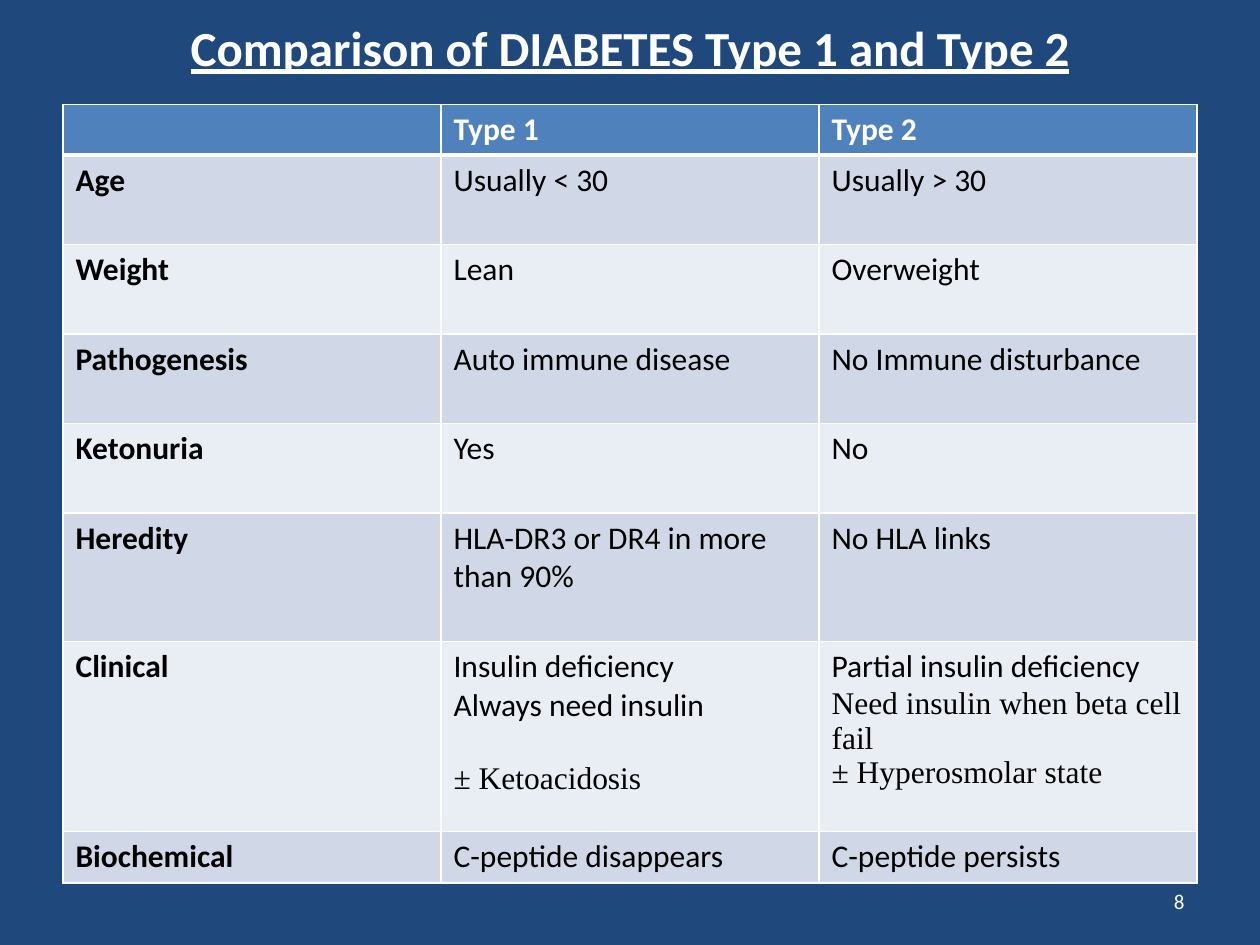
from lxml import etree
from pptx import Presentation
from pptx.dml.color import RGBColor
from pptx.enum.text import MSO_ANCHOR, PP_ALIGN
from pptx.oxml.ns import qn
from pptx.util import Inches, Pt

HEADING = "Comparison of DIABETES Type 1 and Type 2"
PAGE = "8"
COLUMNS = ["", "Type 1", "Type 2"]
SERIF, GAP = {"name": "Times New Roman"}, {"space_before": Pt(21)}
FEATURES = [
    (0.71, "Age", "Usually < 30", "Usually > 30"),
    (0.71, "Weight", "Lean", "Overweight"),
    (0.71, "Pathogenesis", "Auto immune disease", "No Immune disturbance"),
    (0.71, "Ketonuria", "Yes", "No"),
    (1.02, "Heredity", "HLA-DR3 or DR4 in more than 90%", "No HLA links"),
    (1.51, "Clinical",
     ["Insulin deficiency", "Always need insulin", ("± Ketoacidosis", SERIF, GAP)],
     ["Partial insulin deficiency", ("Need insulin when beta cell fail", SERIF, {}),
      ("± Hyperosmolar state", SERIF, {})]),
    (0.41, "Biochemical", "C-peptide disappears", "C-peptide persists"),
]
HEADER_HEIGHT, COLUMN_WIDTH = 0.4, 3

THEME = {
    "background": "1F497D", "light": "FFFFFF", "dark": "000000",
    "header": "4F81BD", "bands": ("D0D8E8", "E9EDF4"),
    "font": "Calibri", "title": Pt(28), "body": Pt(18), "page": Pt(12),
    "rule": 1, "header_rule": 3,
}


def color(key):
    return RGBColor.from_string(THEME[key])


def apply(target, values):
    for attribute, value in values.items():
        setattr(target, attribute, value)


def write(frame, lines, size, ink, font=None, paragraph=None):
    for index, line in enumerate([lines] if isinstance(lines, str) else lines):
        words, line_font, line_spacing = (line, {}, {}) if isinstance(line, str) else line
        para = frame.add_paragraph() if index else frame.paragraphs[0]
        apply(para, {**(paragraph or {}), **line_spacing})
        run = para.add_run()
        run.text = words
        apply(run.font, {"name": THEME["font"], "size": THEME[size], **(font or {}), **line_font})
        run.font.color.rgb = color(ink)


def border(cell, widths):
    properties = cell._tc.get_or_add_tcPr()
    for index, (side, width) in enumerate(widths.items()):
        line = etree.Element(qn(f"a:ln{side}"), w=str(Pt(width)))
        fill = etree.SubElement(line, qn("a:solidFill"))
        etree.SubElement(fill, qn("a:srgbClr"), val=THEME["light"])
        properties.insert(index, line)


def add_comparison(slide):
    heights = [HEADER_HEIGHT] + [feature[0] for feature in FEATURES]
    contents = [COLUMNS] + [feature[1:] for feature in FEATURES]
    comparison = slide.shapes.add_table(
        len(contents), len(COLUMNS), Inches(0.5), Inches(0.83),
        Inches(COLUMN_WIDTH * len(COLUMNS)), Inches(sum(heights))).table
    for column in comparison.columns:
        column.width = Inches(COLUMN_WIDTH)
    for r, (height, entries) in enumerate(zip(heights, contents)):
        comparison.rows[r].height = Inches(height)
        band = THEME["bands"][(r - 1) % 2] if r else THEME["header"]
        for c, entry in enumerate(entries):
            cell = comparison.cell(r, c)
            cell.fill.solid()
            cell.fill.fore_color.rgb = RGBColor.from_string(band)
            widths = dict.fromkeys("LRTB", THEME["rule"])
            if r < 2:
                widths["T" if r else "B"] = THEME["header_rule"]
            border(cell, widths)
            if entry:
                write(cell.text_frame, entry, "body", "dark" if r else "light",
                      {"bold": r == 0 or c == 0})


def main():
    deck = Presentation()
    apply(deck, {"slide_width": Inches(10), "slide_height": Inches(7.5)})
    slide = deck.slides.add_slide(deck.slide_layouts[5])
    slide.background.fill.solid()
    slide.background.fill.fore_color.rgb = color("background")

    title = slide.shapes.title
    apply(title, {"left": Inches(0.5), "top": Inches(-0.25),
                  "width": Inches(9), "height": Inches(1.25)})
    title.text_frame.vertical_anchor = MSO_ANCHOR.MIDDLE
    write(title.text_frame, HEADING, "title", "light",
          {"bold": True, "underline": True}, {"alignment": PP_ALIGN.CENTER})

    page = slide.shapes.add_textbox(Inches(7.17), Inches(6.95), Inches(2.33), Inches(0.4))
    apply(page.text_frame, {"word_wrap": True, "vertical_anchor": MSO_ANCHOR.MIDDLE})
    write(page.text_frame, PAGE, "page", "light", paragraph={"alignment": PP_ALIGN.RIGHT})

    add_comparison(slide)
    deck.save("out.pptx")


if __name__ == "__main__":
    main()
